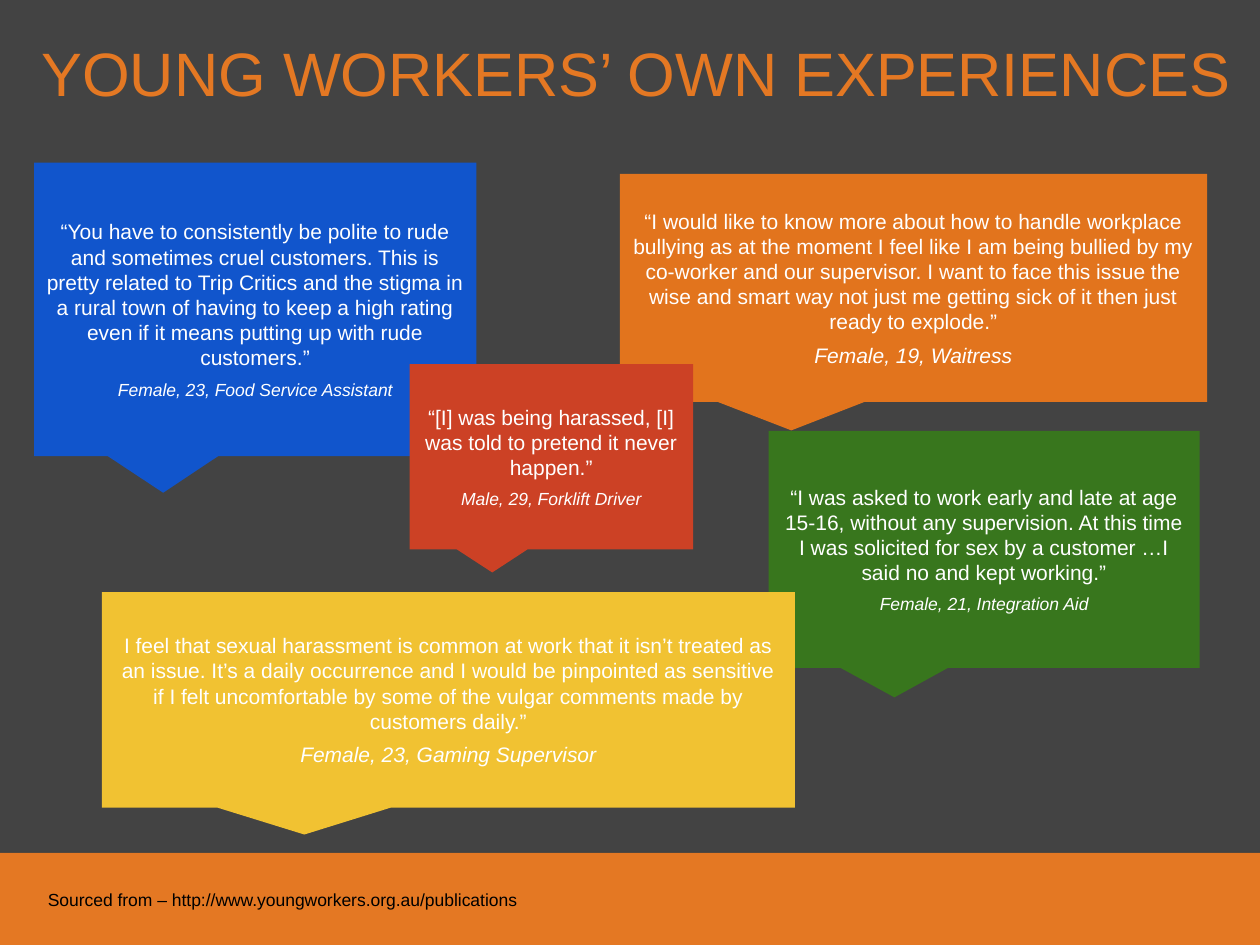
from lxml import etree
from pptx import Presentation, util as u
from pptx.dml.color import RGBColor
from pptx.enum import shapes, text
from pptx.oxml import ns

WIDE, HIGH = 10, 7.5
WHITE, BLACK, GREY, AMBER = "FFFFFF", "000000", "434343", "E47823"
SIDES = "margin_left", "margin_top", "margin_right", "margin_bottom"
TAIL = -0.208, 0.625

QUOTES = [
    ((0.27, 1.29, 3.51, 2.33), "1155CC", 10,
     "“You have to consistently be polite to rude and sometimes cruel customers. "
     "This is pretty related to Trip Critics and the stigma in a rural town of "
     "having to keep a high rating even if it means putting up with rude customers.”",
     "Female, 23, Food Service Assistant"),
    ((6.1, 3.42, 3.42, 1.88), "38761D", 10,
     "“I was asked to work early and late at age 15-16, without any supervision. "
     "At this time I was solicited for sex by a customer …I said no and kept working.”",
     "Female, 21, Integration Aid"),
    ((0.81, 4.7, 5.5, 1.71), "F1C232", 12,
     "I feel that sexual harassment is common at work that it isn’t treated as an "
     "issue. It’s a daily occurrence and I would be pinpointed as sensitive if I felt "
     "uncomfortable by some of the vulgar comments made by customers daily.”",
     "Female, 23, Gaming Supervisor"),
    ((4.92, 1.38, 4.66, 1.81), "E2741D", 12,
     "“I would like to know more about how to handle workplace bullying as at the "
     "moment I feel like I am being bullied by my co-worker and our supervisor. I want "
     "to face this issue the wise and smart way not just me getting sick of it then "
     "just ready to explode.”",
     "Female, 19, Waitress"),
    ((3.25, 2.89, 2.25, 1.47), "CC4125", 10,
     "“[I] was being harassed, [I] was told to pretend it never happen.”",
     "Male, 29, Forklift Driver"),
]


def tint(code):
    return RGBColor.from_string(code)


def apply(item, values):
    for name, value in values.items():
        setattr(item, name, value)


class Deck:
    """Holds the font and the current slide; places are in inches."""

    def __init__(self, font, back):
        self.font = font
        self.file = Presentation()
        apply(self.file, {"slide_width": u.Inches(WIDE), "slide_height": u.Inches(HIGH)})
        self.slide = self.file.slides.add_slide(self.file.slide_layouts[6])
        fill = self.slide.background.fill
        fill.solid()
        fill.fore_color.rgb = tint(back)

    def frame(self, shape, inset, anchor):
        frame = shape.text_frame
        apply(frame, {"word_wrap": True, "vertical_anchor": anchor,
                      **dict.fromkeys(SIDES, u.Inches(inset))})
        return frame

    def line(self, para, words, size, color, italic=False, **form):
        run = para.add_run()
        run.text = words
        apply(run.font, {"name": self.font, "size": u.Pt(size), "italic": italic})
        run.font.color.rgb = tint(color)
        apply(para, form)

    def block(self, kind, place, color):
        shape = self.slide.shapes.add_shape(kind, *map(u.Inches, place))
        shape.shadow.inherit = False
        shape.fill.solid()
        shape.fill.fore_color.rgb = tint(color)
        shape.line.fill.background()
        return shape

    def band(self, place, color):
        """Draw a plain bar with a soft shadow below it."""
        bar = self.block(shapes.MSO_SHAPE.RECTANGLE, place, color)
        effects = bar._element.spPr.find(ns.qn("a:effectLst"))
        shade = etree.SubElement(effects, ns.qn("a:outerShdw"), blurRad=str(u.Pt(3.1)),
                                 dist=str(u.Pt(1.8)), dir="5400000", rotWithShape="0")
        ink = etree.SubElement(shade, ns.qn("a:srgbClr"), val=BLACK)
        etree.SubElement(ink, ns.qn("a:alpha"), val="35000")

    def label(self, place, words, size, color, anchor, **form):
        box = self.slide.shapes.add_textbox(*map(u.Inches, place))
        frame = self.frame(box, 0, anchor)
        self.line(frame.paragraphs[0], words, size, color, **form)

    def quote(self, place, color, size, words, who):
        """Draw a callout; size is that of the speaker line."""
        shape = self.block(shapes.MSO_SHAPE.RECTANGULAR_CALLOUT, place, color)
        for spot, value in enumerate(TAIL):
            shape.adjustments[spot] = value
        frame = self.frame(shape, 0.1, text.MSO_ANCHOR.MIDDLE)
        mid = text.PP_ALIGN.CENTER
        self.line(frame.paragraphs[0], words, 12, WHITE, alignment=mid)
        self.line(frame.add_paragraph(), who, size, WHITE, italic=True,
                  alignment=mid, space_before=u.Pt(4.8))


def main():
    deck = Deck("Arial", GREY)
    deck.band((0, 6.77, WIDE, HIGH - 6.77), AMBER)
    deck.label((0.33, 0.39, 9.5, 0.67), "YOUNG WORKERS’ OWN EXPERIENCES", 35, AMBER,
               text.MSO_ANCHOR.TOP, line_spacing=0.8)
    deck.label((0.38, 6.97, 8.86, 0.25),
               "Sourced from – http://www.youngworkers.org.au/publications", 10, BLACK,
               text.MSO_ANCHOR.BOTTOM)
    for quote in QUOTES:
        deck.quote(*quote)
    deck.file.save("out.pptx")


if __name__ == "__main__":
    main()
